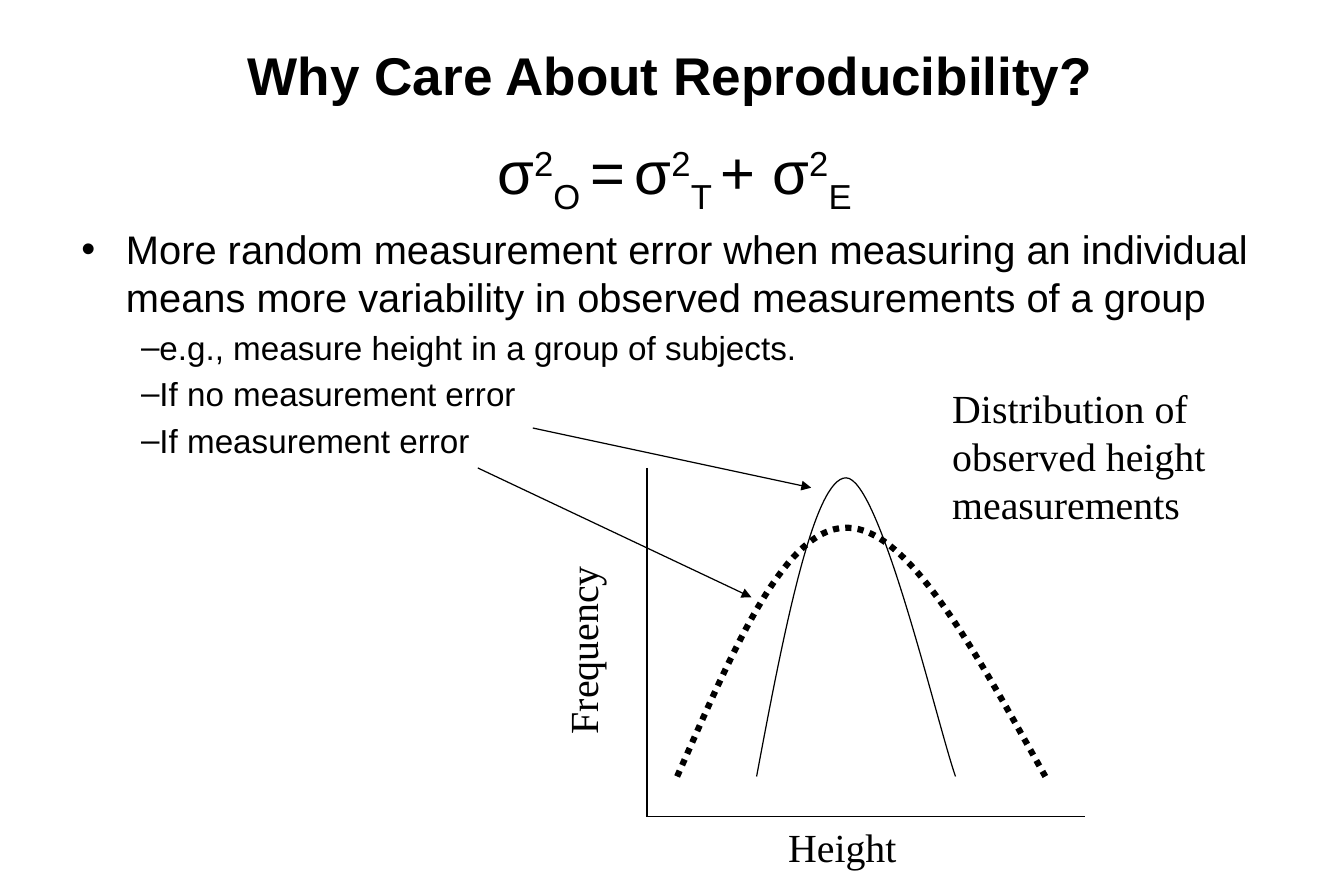
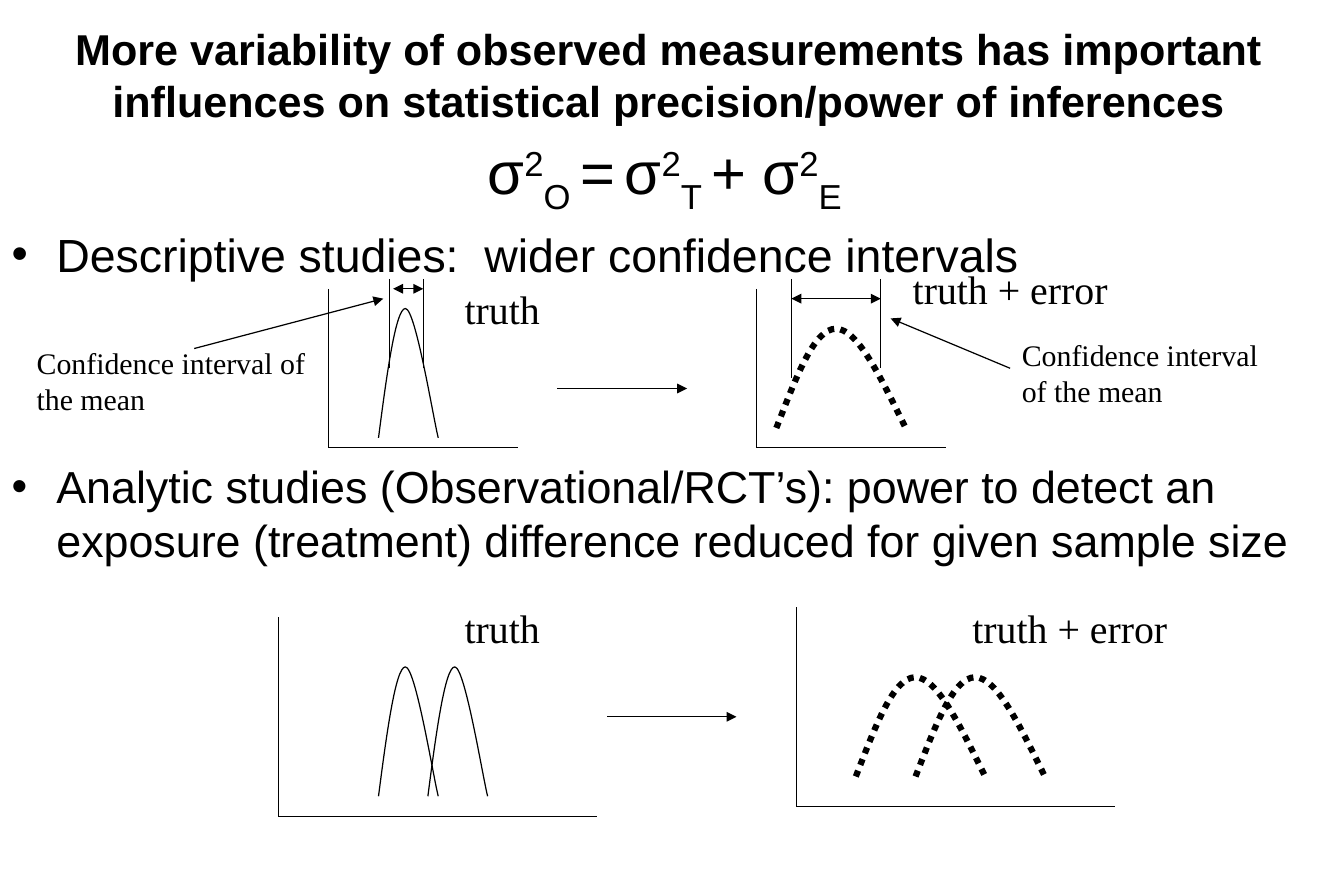
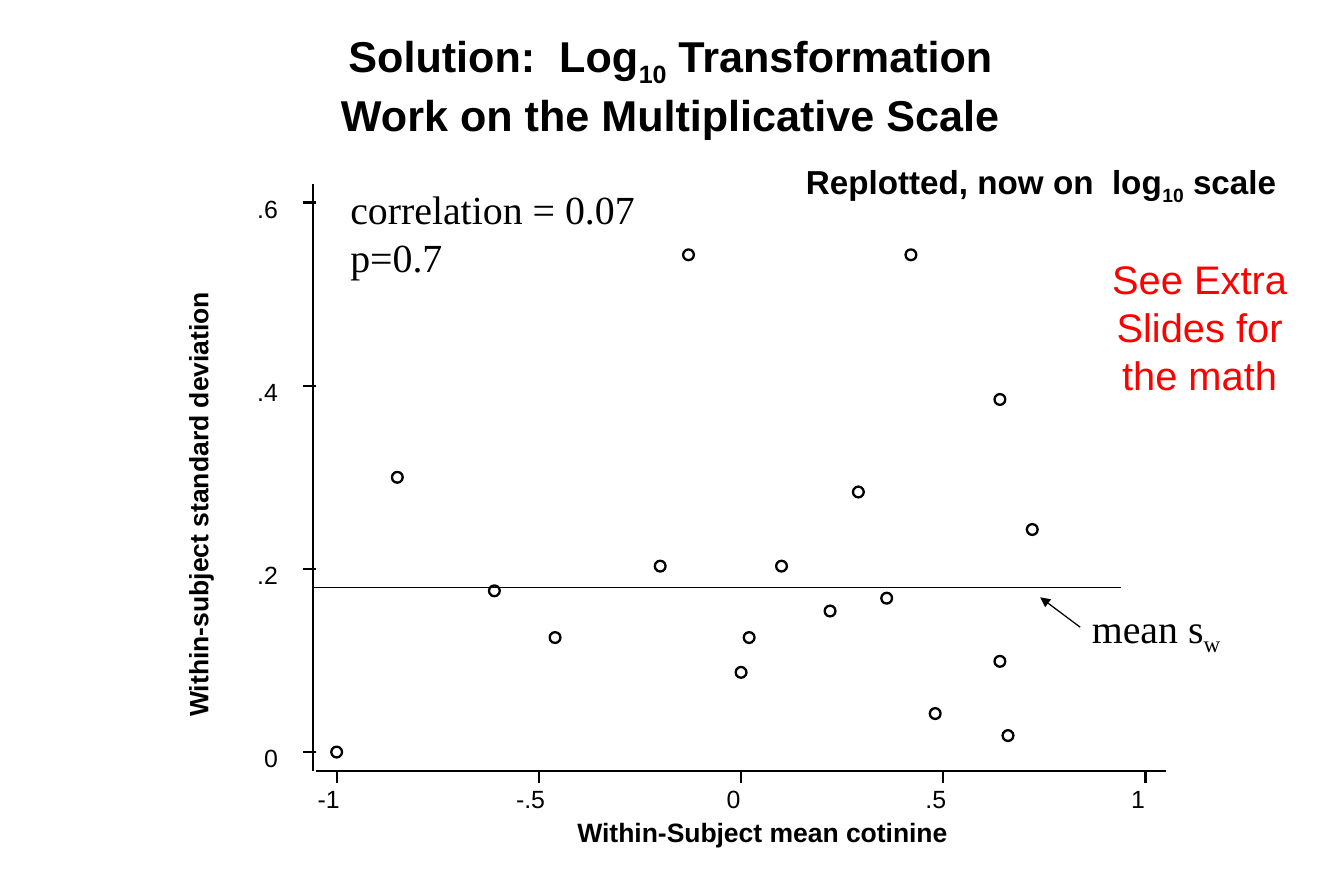
from dataclasses import dataclass

from lxml import etree
from pptx import Presentation
from pptx.dml.color import RGBColor
from pptx.enum.dml import MSO_LINE
from pptx.enum.shapes import MSO_CONNECTOR, MSO_SHAPE
from pptx.enum.text import MSO_ANCHOR, PP_ALIGN
from pptx.oxml.ns import qn
from pptx.shapes.autoshape import Shape
from pptx.shapes.connector import Connector
from pptx.slide import Slide
from pptx.util import Cm, Pt

BLACK = RGBColor(0x00, 0x00, 0x00)
RED = RGBColor(0xFF, 0x00, 0x00)
SANS = "Arial"
SERIF = "Times New Roman"
LEFT, CENTER = PP_ALIGN.LEFT, PP_ALIGN.CENTER
TOP, MIDDLE = MSO_ANCHOR.TOP, MSO_ANCHOR.MIDDLE
STRAIGHT = MSO_CONNECTOR.STRAIGHT
ELLIPSE = MSO_SHAPE.OVAL
DOTTED = MSO_LINE.ROUND_DOT
LEFT_SIDE = 1

SUPERSCRIPT, SUBSCRIPT = 30, -25
THIN, PLOT, THICK = 0.75, 1.38, 3.75


@dataclass(frozen=True)
class Run:
    text: str
    baseline: int = 0
    size: float | None = None


@dataclass(frozen=True)
class Paragraph:
    runs: tuple[Run, ...]
    size: float
    bullet: str = ""
    level: int = 0
    margin: float = 0
    indent: float = 0
    space_before: float = 0
    align: PP_ALIGN = LEFT


@dataclass(frozen=True)
class Label:
    left: float
    top: float
    width: float
    height: float
    runs: tuple[Run, ...]
    size: float = 24
    font: str = SERIF
    bold: bool = False
    color: RGBColor = BLACK
    align: PP_ALIGN = LEFT
    anchor: MSO_ANCHOR = TOP
    rotation: float = 0
    tight: bool = False


@dataclass(frozen=True)
class Line:
    start_x: float
    start_y: float
    end_x: float
    end_y: float
    head: bool = False
    tail: bool = False
    weight: float = THIN


@dataclass(frozen=True)
class Axes:
    left: float
    top: float
    right: float
    bottom: float


@dataclass(frozen=True)
class CurveStyle:
    controls: tuple[tuple[float, float], ...]
    weight: float
    dotted: bool


@dataclass(frozen=True)
class Curve:
    style: CurveStyle
    left: float
    top: float
    width: float
    height: float


@dataclass(frozen=True)
class Tick:
    value: float
    text: str
    width: float


TRUTH = CurveStyle(
    ((0, 1), (0.14, 0.5), (0.29, 0), (0.45, 0), (0.62, 0), (0.91, 0.83), (1, 1)),
    THIN, False)
WITH_ERROR = CurveStyle(
    ((0, 1), (0.15, 0.5), (0.29, 0), (0.46, 0), (0.63, 0), (0.81, 0.5), (1, 1)),
    THICK, True)

VARIANCE_FORMULA = Paragraph(
    (Run("σ"), Run("2", SUPERSCRIPT), Run("O ", SUBSCRIPT),
     Run("="), Run(" ", SUBSCRIPT), Run("σ"), Run("2", SUPERSCRIPT),
     Run("T ", SUBSCRIPT), Run("+ σ"), Run("2", SUPERSCRIPT),
     Run("E", SUBSCRIPT), Run(" ", size=32)),
    36, align=CENTER)


def plain(text: str) -> tuple[Run, ...]:
    return (Run(text),)


def bullet(text: str, size: float, space_before: float | None = None) -> Paragraph:
    space = 0.2 * size if space_before is None else space_before
    return Paragraph(plain(text), size, "•", 0, 0.95, -0.95, space)


def dash(text: str) -> Paragraph:
    return Paragraph(plain(text), 20, "–", 1, 1.45, -0.18, 4)


def fill_paragraph(paragraph, runs: tuple[Run, ...], size: float, font: str,
                   bold: bool = False, color: RGBColor = BLACK) -> None:
    for part in runs:
        if part.text == "\n":
            paragraph.add_line_break()
            continue
        run = paragraph.add_run()
        run.text = part.text
        run.font.size = Pt(part.size or size)
        run.font.name = font
        run.font.bold = bold
        run.font.color.rgb = color
        if part.baseline:
            run._r.get_or_add_rPr().set("baseline", str(part.baseline * 1000))


def add_label(slide: Slide, label: Label) -> Shape:
    box = slide.shapes.add_textbox(
        Cm(label.left), Cm(label.top), Cm(label.width), Cm(label.height))
    box.rotation = label.rotation
    frame = box.text_frame
    frame.word_wrap = not label.tight
    frame.vertical_anchor = label.anchor
    if label.tight:
        frame.margin_left = frame.margin_right = Cm(0)
        frame.margin_top = frame.margin_bottom = Cm(0)
    paragraph = frame.paragraphs[0]
    paragraph.alignment = label.align
    fill_paragraph(paragraph, label.runs, label.size, label.font, label.bold, label.color)
    return box


def add_title(slide: Slide, left: float, top: float, width: float,
              runs: tuple[Run, ...], size: float) -> None:
    add_label(slide, Label(left, top, width, 1.47, runs, size, SANS, True,
                           align=CENTER, anchor=MIDDLE))


def add_bullet(paragraph, item: Paragraph) -> None:
    properties = paragraph._p.get_or_add_pPr()
    properties.set("marL", str(Cm(item.margin)))
    properties.set("indent", str(Cm(item.indent)))
    etree.SubElement(properties, qn("a:buFont")).set("typeface", SANS)
    etree.SubElement(properties, qn("a:buChar")).set("char", item.bullet)


def add_body(slide: Slide, left: float, width: float,
             paragraphs: tuple[Paragraph, ...]) -> None:
    box = slide.shapes.add_textbox(Cm(left), Cm(2.75), Cm(width), Cm(15.24))
    frame = box.text_frame
    frame.word_wrap = True
    for index, item in enumerate(paragraphs):
        paragraph = frame.add_paragraph() if index else frame.paragraphs[0]
        paragraph.alignment = item.align
        paragraph.level = item.level
        paragraph.space_before = Pt(item.space_before)
        fill_paragraph(paragraph, item.runs, item.size, SANS)
        if item.bullet:
            add_bullet(paragraph, item)
        paragraph.font.size = Pt(item.size)
        paragraph.font.name = SANS


def add_line(slide: Slide, line: Line) -> Connector:
    connector = slide.shapes.add_connector(
        STRAIGHT, Cm(line.start_x), Cm(line.start_y), Cm(line.end_x), Cm(line.end_y))
    connector.line.color.rgb = BLACK
    connector.line.width = Pt(line.weight)
    properties = connector._element.spPr
    outline = properties.find(qn("a:ln"))
    for present, tag in ((line.head, "a:headEnd"), (line.tail, "a:tailEnd")):
        if present:
            etree.SubElement(outline, qn(tag)).set("type", "triangle")
    etree.SubElement(properties, qn("a:effectLst"))
    return connector


def add_axes(slide: Slide, axes: Axes) -> None:
    add_line(slide, Line(axes.left, axes.top, axes.left, axes.bottom))
    add_line(slide, Line(axes.left, axes.bottom, axes.right, axes.bottom))


def bend_segments(shape: Shape) -> None:
    segments = list(shape._element.iter(qn("a:lnTo")))
    for first in range(0, len(segments), 3):
        bend = etree.Element(qn("a:cubicBezTo"))
        segments[first].addprevious(bend)
        for segment in segments[first:first + 3]:
            bend.append(segment[0])
            segment.getparent().remove(segment)


def add_curve(slide: Slide, curve: Curve) -> None:
    points = [(Cm(curve.left + x * curve.width), Cm(curve.top + y * curve.height))
              for x, y in curve.style.controls]
    builder = slide.shapes.build_freeform(*points[0])
    builder.add_line_segments(points[1:], close=False)
    shape = builder.convert_to_shape()
    bend_segments(shape)
    shape.shadow.inherit = False
    shape.fill.background()
    shape.line.color.rgb = BLACK
    shape.line.width = Pt(curve.style.weight)
    if curve.style.dotted:
        shape.line.dash_style = DOTTED


def build_reproducibility(slide: Slide) -> None:
    add_title(slide, 2.12, 0.85, 24.28, plain("Why Care About Reproducibility?"), 32)
    add_body(slide, 1.48, 26.04, (
        VARIANCE_FORMULA,
        bullet("More random measurement error when measuring an individual means "
               "more variability in observed measurements of a group", 24),
        dash("e.g., measure height in a group of subjects."),
        dash("If no measurement error"),
        dash("If measurement error")))
    add_axes(slide, Axes(13.76, 9.95, 23.07, 17.36))
    add_curve(slide, Curve(TRUTH, 16.09, 10.16, 4.23, 6.35))
    add_curve(slide, Curve(WITH_ERROR, 14.4, 11.22, 7.83, 5.29))
    add_line(slide, Line(10.16, 9.95, 15.98, 12.7, tail=True))
    add_line(slide, Line(11.33, 9.1, 17.25, 10.37, tail=True))
    add_label(slide, Label(16.51, 17.36, 4.45, 1.27, plain("Height")))
    add_label(slide, Label(10.16, 13, 4.45, 1.27, plain("Frequency"), rotation=270))
    add_label(slide, Label(20, 8.04, 7.83, 3.3,
                           plain("Distribution of observed height measurements")))


def build_precision(slide: Slide) -> None:
    add_title(slide, 0.75, 0.85, 26.97,
              plain("More variability of observed measurements has important "
                    "influences on statistical precision/power of inferences"), 26)
    add_body(slide, 0, 28.58, (
        VARIANCE_FORMULA,
        bullet("Descriptive studies:  wider confidence intervals", 28),
        bullet("Analytic studies (Observational/RCT’s): power to detect an exposure "
               "(treatment) difference reduced for given sample size", 27, 106.7)))

    for axes in (Axes(6.99, 6.14, 11.01, 9.52), Axes(16.09, 6.14, 20.11, 9.52),
                 Axes(5.93, 13.12, 12.7, 17.36), Axes(16.93, 12.91, 23.71, 17.15)):
        add_axes(slide, axes)
    for left, top in ((8.05, 6.56), (8.05, 14.18), (9.1, 14.18)):
        add_curve(slide, Curve(TRUTH, left, top, 1.27, 2.75))
    for left, top in ((16.51, 6.99), (18.2, 14.4), (19.47, 14.4)):
        add_curve(slide, Curve(WITH_ERROR, left, top, 2.75, 2.11))

    for left, top, width, text in (
            (9.63, 5.93, 4.88, "truth"), (19.16, 5.5, 7.42, "truth + error"),
            (9.63, 12.7, 4.88, "truth"), (20.43, 12.7, 7.42, "truth + error")):
        add_label(slide, Label(left, top, width, 1.27, plain(text)))

    for line in (
            Line(11.85, 8.26, 14.61, 8.26, tail=True),
            Line(12.91, 15.24, 15.66, 15.24, tail=True),
            Line(8.29, 5.93, 8.29, 7.83),
            Line(9, 5.93, 9, 7.83),
            Line(8.36, 6.14, 9, 6.14, head=True, tail=True),
            Line(16.83, 5.93, 16.83, 8.04),
            Line(18.73, 5.93, 18.73, 7.83),
            Line(16.83, 6.35, 18.73, 6.35, head=True, tail=True),
            Line(4.13, 7.41, 8.15, 6.35, tail=True),
            Line(21.48, 7.83, 18.94, 6.77, tail=True)):
        add_line(slide, line)

    interval = plain("Confidence interval of the mean")
    add_label(slide, Label(0.53, 7.2, 6.35, 1.78, interval, 18))
    add_label(slide, Label(21.48, 7.04, 6.14, 1.78, interval, 18))


X_ZERO, X_UNIT = 15.76, 8.6
Y_ZERO, Y_UNIT = 15.99, 19.47
X_AXIS, Y_AXIS = 16.39, 6.66
DOT = 0.23
X_TICKS = (Tick(-1, "-1", 0.81), Tick(-0.5, "-.5", 0.97), Tick(0, "0", 0.61),
           Tick(0.5, ".5", 0.76), Tick(1, "1", 0.61))
Y_TICKS = (Tick(0, "0", 0.61), Tick(0.2, ".2", 0.76),
           Tick(0.4, ".4", 0.76), Tick(0.6, ".6", 0.76))
MEAN_AND_DEVIATION_PERCENT = (
    (-1, 0), (-0.85, 30), (-0.61, 17.6), (-0.46, 12.5), (-0.13, 54.3), (-0.2, 20.3),
    (0.1, 20.3), (0, 8.7), (0.02, 12.5), (0.36, 16.8), (0.22, 15.4), (0.29, 28.4),
    (0.64, 38.5), (0.48, 4.2), (0.66, 1.8), (0.42, 54.3), (0.64, 9.9), (0.72, 24.3))


def plot_x(value: float) -> float:
    return X_ZERO + X_UNIT * value


def plot_y(value: float) -> float:
    return Y_ZERO - Y_UNIT * value


def add_dot(slide: Slide, x: float, y: float) -> None:
    dot = slide.shapes.add_shape(
        ELLIPSE, Cm(x - DOT / 2), Cm(y - DOT / 2), Cm(DOT), Cm(DOT))
    dot.shadow.inherit = False
    dot.fill.background()
    dot.line.color.rgb = BLACK
    dot.line.width = Pt(PLOT)


def add_scatter(slide: Slide) -> None:
    add_line(slide, Line(24.79, X_AXIS, 6.73, X_AXIS, weight=PLOT))
    add_line(slide, Line(Y_AXIS, X_AXIS, Y_AXIS, 3.91, weight=PLOT))
    for tick in X_TICKS:
        x = plot_x(tick.value)
        add_line(slide, Line(x, 16.64, x, X_AXIS, weight=PLOT))
        add_label(slide, Label(x - tick.width / 2, 16.66, tick.width, 0.7,
                               plain(tick.text), 15, SANS, tight=True))
    for tick in Y_TICKS:
        y = plot_y(tick.value)
        add_line(slide, Line(6.73, y, 6.45, y, weight=PLOT))
        add_label(slide, Label(6.23 - tick.width, y - 0.2, tick.width, 0.7,
                               plain(tick.text), 15, SANS, tight=True))
    for mean, percent in MEAN_AND_DEVIATION_PERCENT:
        add_dot(slide, plot_x(mean), plot_y(percent / 100))
    add_label(slide, Label(-0.66, 10.02, 9.75, 0.69,
                           plain("Within-subject standard deviation"),
                           16, SANS, True, rotation=270, tight=True))
    add_label(slide, Label(12.28, 17.35, 7.9, 0.69, plain("Within-Subject mean cotinine"),
                           16, SANS, True, tight=True))


def build_transformation(slide: Slide) -> None:
    add_title(slide, 0.2, 1.07, 28.38,
              (Run("Solution:  Log"), Run("10", SUBSCRIPT), Run(" Transformation "),
               Run("\n"), Run("Work on the Multiplicative Scale ")), 26)
    add_scatter(slide)
    add_label(slide, Label(7.2, 3.81, 6.78, 2.29, plain("correlation = 0.07 p=0.7")))
    add_line(slide, Line(Y_AXIS, 12.49, 23.83, 12.49))
    mean_label = add_label(slide, Label(22.97, 12.7, 4.45, 1.27,
                                        (Run("mean s"), Run("w", SUBSCRIPT))))
    arrow = add_line(slide, Line(22.97, 13.34, 22.12, 12.7, tail=True))
    arrow.begin_connect(mean_label, LEFT_SIDE)
    add_label(slide, Label(16.14, 3.18, 12, 1.47,
                           (Run("Replotted, now on  log"), Run("10", SUBSCRIPT),
                            Run(" scale")),
                           20, SANS, True, align=CENTER, anchor=MIDDLE))
    add_label(slide, Label(23.39, 5.29, 4.24, 3.33, plain("See Extra Slides for the math"),
                           font=SANS, color=RED, align=CENTER))


def main() -> None:
    presentation = Presentation()
    presentation.slide_width = Cm(28.58)
    presentation.slide_height = Cm(19.05)
    blank = presentation.slide_layouts[6]
    for build in (build_reproducibility, build_precision, build_transformation):
        build(presentation.slides.add_slide(blank))
    presentation.save("out.pptx")


if __name__ == "__main__":
    main()
